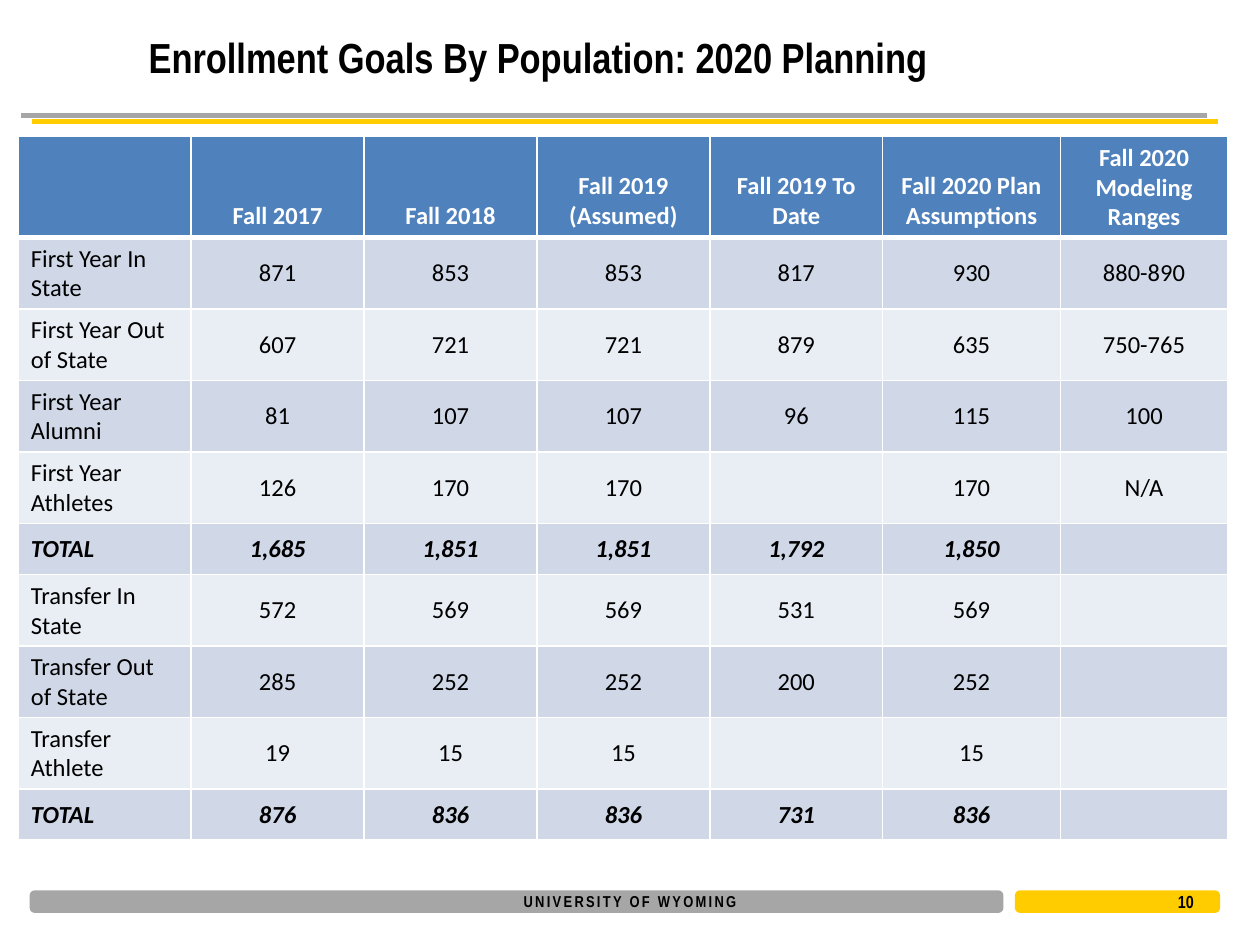
from dataclasses import dataclass

from lxml.etree import SubElement
from pptx import Presentation
from pptx.dml.color import RGBColor
from pptx.enum.shapes import MSO_CONNECTOR, MSO_SHAPE
from pptx.enum.text import MSO_ANCHOR, PP_ALIGN
from pptx.oxml.ns import qn
from pptx.slide import Slide
from pptx.table import _Cell
from pptx.util import Pt

BLACK = RGBColor(0x00, 0x00, 0x00)
WHITE = RGBColor(0xFF, 0xFF, 0xFF)
GRAY = RGBColor(0xA6, 0xA6, 0xA6)
GOLD = RGBColor(0xFF, 0xCC, 0x00)
HEADER_BLUE = RGBColor(0x4F, 0x81, 0xBD)
BANDS = (RGBColor(0xD0, 0xD8, 0xE8), RGBColor(0xE9, 0xED, 0xF4))

COLUMN_WIDTHS = (98.8,) * 5 + (101.5, 95.7)
ROW_HEIGHT = 29.2
TABLE_HEIGHT = 401.8
HEADERS = ("", "Fall 2017", "Fall 2018", "Fall 2019 (Assumed)", "Fall 2019 To Date",
           "Fall 2020 Plan Assumptions", "Fall 2020 Modeling Ranges")
ENROLLMENT = (
    ("First Year In State", "871", "853", "853", "817", "930", "880-890"),
    ("First Year Out of State", "607", "721", "721", "879", "635", "750-765"),
    ("First Year Alumni", "81", "107", "107", "96", "115", "100"),
    ("First Year Athletes", "126", "170", "170", "", "170", "N/A"),
    ("TOTAL", "1,685", "1,851", "1,851", "1,792", "1,850", ""),
    ("Transfer In State", "572", "569", "569", "531", "569", ""),
    ("Transfer Out of State", "285", "252", "252", "200", "252", ""),
    ("Transfer Athlete", "19", "15", "15", "", "15", ""),
    ("TOTAL", "876", "836", "836", "731", "836", ""),
)


@dataclass(frozen=True)
class Area:
    left: float
    top: float
    width: float
    height: float

    def lengths(self) -> tuple:
        return Pt(self.left), Pt(self.top), Pt(self.width), Pt(self.height)


@dataclass(frozen=True)
class Label:
    text: str
    area: Area
    size: float
    align: PP_ALIGN = PP_ALIGN.LEFT
    wrap: bool = True
    spacing: float = 0
    side_margin: float = 7.2


@dataclass(frozen=True)
class Bar:
    area: Area
    color: RGBColor


LABELS = (
    Label("UNIVERSITY OF WYOMING", Area(295.2, 506.2, 129.6, 18), 9, PP_ALIGN.CENTER,
          wrap=False, spacing=1.3, side_margin=0),
    Label("Enrollment Goals By Population: 2020 Planning", Area(77.8, 10.8, 630, 43.2), 24),
    Label("10", Area(666, 508.3, 36, 13.7), 10),
)
FOOTER_BARS = (
    Bar(Area(18, 509.8, 554.4, 10.8), GRAY),
    Bar(Area(581, 509.8, 115.2, 10.8), GOLD),
)


def write_text(para, text: str, align: PP_ALIGN, formats: dict):
    para.alignment = align
    span = para.add_run()
    span.text = text
    span.font.color.rgb = formats["color"]
    for name in ("name", "size", "bold", "italic"):
        setattr(span.font, name, formats.get(name))
    return span


def add_label(page: Slide, label: Label) -> None:
    frame = page.shapes.add_textbox(*label.area.lengths()).text_frame
    frame.word_wrap = label.wrap
    frame.vertical_anchor = MSO_ANCHOR.MIDDLE
    frame.margin_left = frame.margin_right = Pt(label.side_margin)
    formats = {"name": "Arial Narrow", "size": Pt(label.size), "bold": True, "color": BLACK}
    span = write_text(frame.paragraphs[0], label.text, label.align, formats)
    if label.spacing:
        span.font._element.set("spc", str(round(label.spacing * 100)))


def add_bar(page: Slide, bar: Bar) -> None:
    shape = page.shapes.add_shape(MSO_SHAPE.ROUNDED_RECTANGLE, *bar.area.lengths())
    shape.shadow.inherit = False
    shape.fill.solid()
    shape.fill.fore_color.rgb = bar.color
    shape.line.color.rgb = bar.color
    shape.line.width = Pt(2)


def add_title_rule(page: Slide) -> None:
    """Gray rule with a hard gold shadow below and to the right."""
    rule = page.shapes.add_connector(MSO_CONNECTOR.STRAIGHT, Pt(12.2), Pt(66.2), Pt(689.8), Pt(66.2))
    rule.line.color.rgb = GRAY
    rule.line.width = Pt(3)
    effects = SubElement(rule._element.spPr, qn("a:effectLst"))
    shadow = SubElement(effects, qn("a:outerShdw"), dist=str(Pt(6.7)), dir=str(27 * 60000),
                        algn="ctr", rotWithShape="0")
    SubElement(shadow, qn("a:srgbClr"), val=str(GOLD))


def set_borders(cell: _Cell, top: float, bottom: float) -> None:
    properties = cell._tc.get_or_add_tcPr()
    for side, width in {"L": 1, "R": 1, "T": top, "B": bottom}.items():
        line = SubElement(properties, qn(f"a:ln{side}"), w=str(Pt(width)))
        fill = SubElement(line, qn("a:solidFill"))
        SubElement(fill, qn("a:srgbClr"), val=str(WHITE))


def fill_cell(cell: _Cell, text: str, row: int, column: int, total: bool) -> None:
    header = row == 0
    set_borders(cell, top=3 if row == 1 else 1, bottom=3 if header else 1)
    cell.fill.solid()
    cell.fill.fore_color.rgb = HEADER_BLUE if header else BANDS[(row - 1) % 2]
    cell.vertical_anchor = MSO_ANCHOR.BOTTOM if header else MSO_ANCHOR.MIDDLE
    if text:
        formats = {"name": "Calibri", "size": Pt(14), "bold": header or total,
                   "italic": total, "color": WHITE if header else BLACK}
        align = PP_ALIGN.CENTER if column else PP_ALIGN.LEFT
        write_text(cell.text_frame.paragraphs[0], text, align, formats)


def add_enrollment_table(page: Slide) -> None:
    rows = (HEADERS, *ENROLLMENT)
    area = Area(10.5, 78.1, sum(COLUMN_WIDTHS), ROW_HEIGHT * len(rows))
    holder = page.shapes.add_table(len(rows), len(HEADERS), *area.lengths())
    table = holder.table
    for column, width in zip(table.columns, COLUMN_WIDTHS):
        column.width = Pt(width)
    for row, values in enumerate(rows):
        for column, text in enumerate(values):
            fill_cell(table.cell(row, column), text, row, column, values[0] == "TOTAL")
    holder.height = Pt(TABLE_HEIGHT)


def main() -> None:
    deck = Presentation()
    deck.slide_width, deck.slide_height = Pt(720), Pt(540)
    page = deck.slides.add_slide(deck.slide_layouts[6])
    add_title_rule(page)
    for bar in FOOTER_BARS:
        add_bar(page, bar)
    for label in LABELS:
        add_label(page, label)
    add_enrollment_table(page)
    deck.save("out.pptx")


if __name__ == "__main__":
    main()
